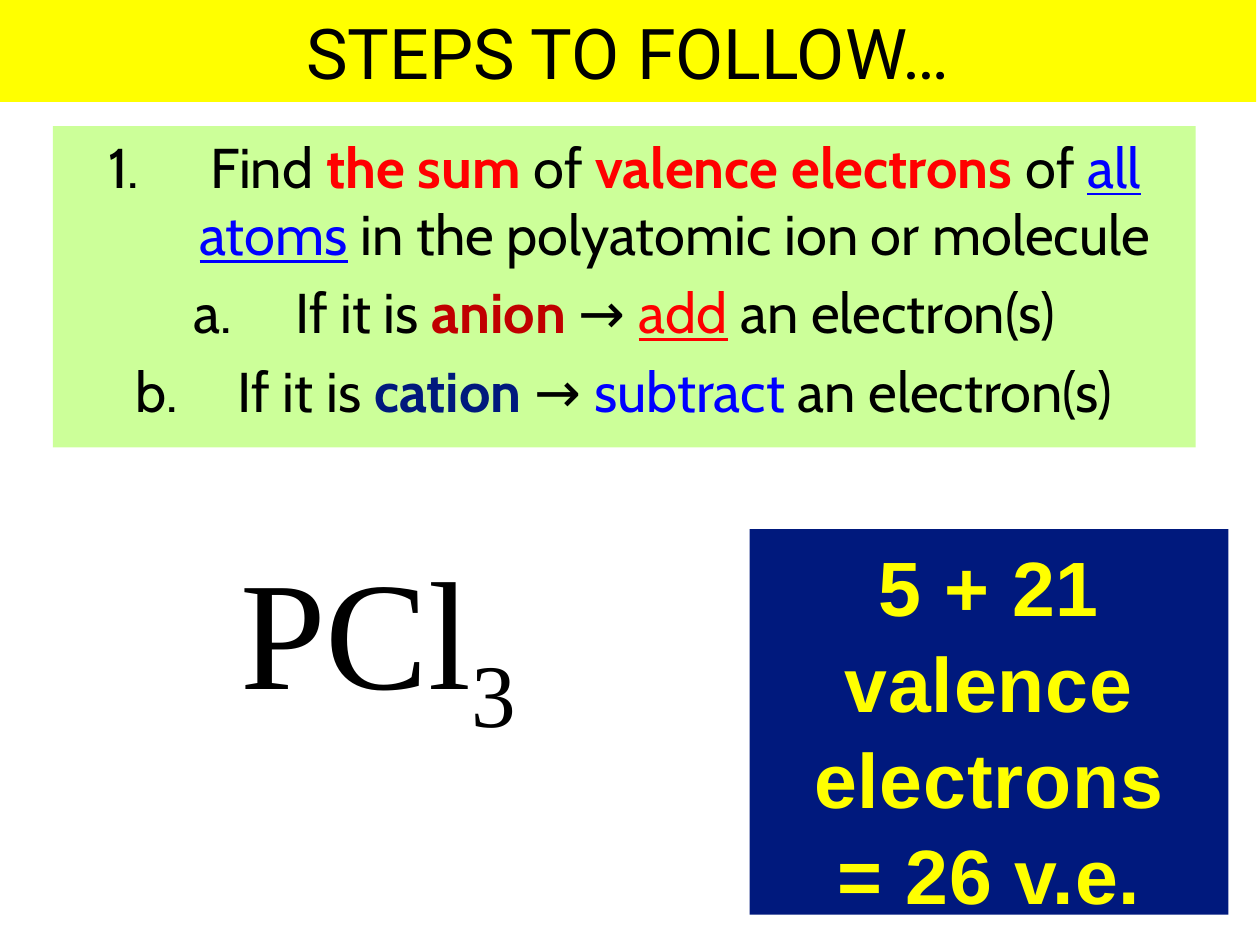
from dataclasses import dataclass
from typing import Optional

from pptx import Presentation
from pptx import util as u
from pptx.dml.color import RGBColor
from pptx.enum import shapes, text
from pptx.oxml.xmlchemy import OxmlElement

PX = 9144  # EMU per px, 100 px to the inch


@dataclass(frozen=True)
class Theme:
    black: str = "000000"
    yellow: str = "FFFF00"
    green: str = "CCFF99"
    red: str = "FF0000"
    dark_red: str = "C00000"
    blue: str = "0000FF"
    navy: str = "00197D"
    title_size: int = 40
    step_size: int = 32
    formula_size: int = 88
    answer_size: int = 44


@dataclass(frozen=True)
class Box:
    left: int
    top: int
    width: int
    height: int

    def emu(self) -> list[int]:
        return [n * PX for n in (self.left, self.top, self.width, self.height)]


@dataclass(frozen=True)
class Phrase:
    """A stretch of a step that keeps one format."""
    words: str
    color: str = Theme.black
    bold: bool = False
    underline: bool = False


@dataclass(frozen=True)
class Step:
    numbering: str
    phrases: tuple[Phrase, ...]


THEME = Theme()
TITLE_BOX = Box(0, 0, 997, 81)
STEPS_BOX = Box(42, 100, 907, 255)
FORMULA_BOX = Box(175, 420, 250, 183)
ANSWER_BOX = Box(595, 420, 380, 306)

STEPS = (
    Step("arabicPeriod", (
        Phrase("Find "), Phrase("the sum ", THEME.red, bold=True),
        Phrase("of "), Phrase("valence electrons ", THEME.red, bold=True),
        Phrase("of "), Phrase("all atoms", THEME.blue, underline=True),
        Phrase(" in the polyatomic ion or molecule"))),
    Step("alphaLcPeriod", (
        Phrase("If it is "), Phrase("anion ", THEME.dark_red, bold=True),
        Phrase("→ "), Phrase("add", THEME.red, underline=True),
        Phrase(" an electron(s)"))),
    Step("alphaLcPeriod", (
        Phrase("If it is "), Phrase("cation ", THEME.navy, bold=True),
        Phrase("→ "), Phrase("subtract ", THEME.blue),
        Phrase("an electron(s)"))),
)


def place(shape, box: Box, fill: Optional[str] = None,
          anchor=text.MSO_ANCHOR.TOP) -> None:
    shape.left, shape.top, shape.width, shape.height = box.emu()
    if fill:
        shape.fill.solid()
        shape.fill.fore_color.rgb = RGBColor.from_string(fill)
    frame = shape.text_frame
    frame.word_wrap = True
    frame.auto_size = text.MSO_AUTO_SIZE.NONE
    frame.vertical_anchor = anchor


def add_text(paragraph, words: str, *, font: str, size: int,
             color: str = THEME.black, bold: bool = False,
             underline: bool = False, baseline: int = 0,
             spacing: int = 0) -> None:
    """Add a run; baseline is in 1/1000 %, spacing in 1/100 pt."""
    paragraph.alignment = text.PP_ALIGN.CENTER
    run = paragraph.add_run()
    run.text = words
    run.font.name = font
    run.font.size = u.Pt(size)
    run.font.color.rgb = RGBColor.from_string(color)
    run.font.bold = bold
    run.font.underline = underline
    props = run._r.get_or_add_rPr()
    if baseline:
        props.set("baseline", str(baseline))
    if spacing:
        props.set("spc", str(spacing))


def hang(paragraph, indent: int) -> None:
    props = paragraph._p.get_or_add_pPr()
    props.set("marL", str(indent * PX))
    props.set("indent", str(-indent * PX))


def number(paragraph, numbering: str) -> None:
    bullet = OxmlElement("a:buAutoNum")
    bullet.set("type", numbering)
    paragraph._p.get_or_add_pPr().append(bullet)


def paragraph_at(frame, index: int):
    return frame.add_paragraph() if index else frame.paragraphs[0]


def add_steps(body) -> None:
    place(body, STEPS_BOX, THEME.green)
    for index, step in enumerate(STEPS):
        line = paragraph_at(body.text_frame, index)
        line.space_before = u.Pt(0.2 * THEME.step_size)
        hang(line, 81)
        number(line, step.numbering)
        for phrase in step.phrases:
            add_text(line, phrase.words, font="Cabin", size=THEME.step_size,
                     color=phrase.color, bold=phrase.bold,
                     underline=phrase.underline)


def add_formula(slide) -> None:
    formula = slide.shapes.add_textbox(*FORMULA_BOX.emu())
    place(formula, FORMULA_BOX)
    line = formula.text_frame.paragraphs[0]
    line.space_before = u.Pt(6)
    hang(line, 30)
    for symbol, baseline in (("PCl", 0), ("3", -25000)):
        add_text(line, symbol, font="Times New Roman",
                 size=THEME.formula_size, baseline=baseline)


def add_answer(slide) -> None:
    answer = slide.shapes.add_shape(shapes.MSO_SHAPE.RECTANGLE,
                                    *ANSWER_BOX.emu())
    answer.shadow.inherit = False
    answer.line.fill.background()
    place(answer, ANSWER_BOX, THEME.navy)
    for index, words in enumerate(("5 + 21 valence electrons", "= 26 v.e.")):
        line = paragraph_at(answer.text_frame, index)
        line.line_spacing = 1.04
        add_text(line, words, font="Arial", size=THEME.answer_size,
                 color=THEME.yellow, bold=True, spacing=50)


def main() -> None:
    deck = Presentation()
    deck.slide_width, deck.slide_height = 1000 * PX, 750 * PX
    slide = deck.slides.add_slide(deck.slide_layouts[1])
    title, body = slide.placeholders
    place(title, TITLE_BOX, THEME.yellow, text.MSO_ANCHOR.MIDDLE)
    add_text(title.text_frame.paragraphs[0], "STEPS TO FOLLOW…",
             font="Roboto", size=THEME.title_size)
    add_steps(body)
    add_formula(slide)
    add_answer(slide)
    deck.save("out.pptx")


if __name__ == "__main__":
    main()
